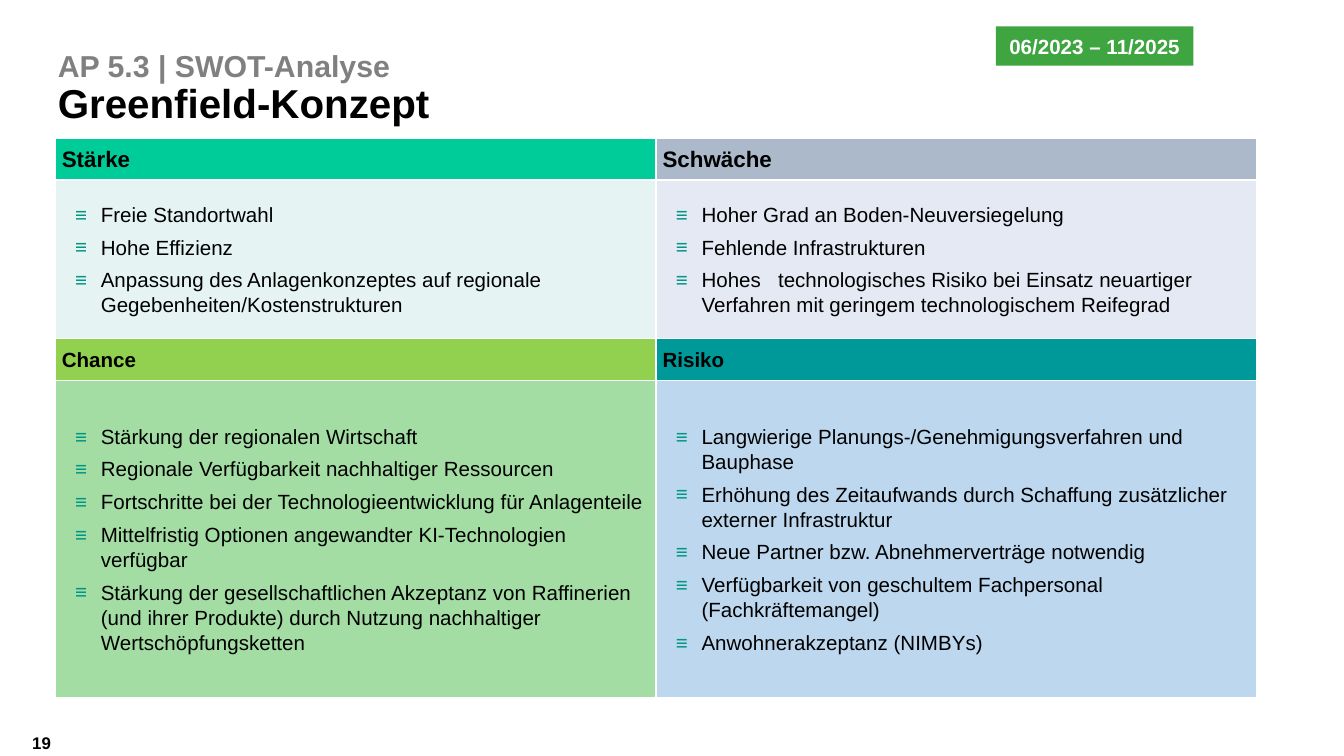
import pptx
import pptx.dml.color
import pptx.enum.shapes
import pptx.enum.text
import pptx.oxml
import pptx.oxml.ns
import pptx.util

WIDTH = 10
HEIGHT = WIDTH * 9 / 16
FONT = "Arial"
MIDDLE = pptx.enum.text.MSO_ANCHOR.MIDDLE
COLORS = {
    "text": "000000", "grey": "808080", "white": "FFFFFF",
    "badge": "3EA540", "bullet": "009682",
    "strength": "00CC99", "strength_body": "E5F4F2",
    "weakness": "ACB9CA", "weakness_body": "E5E9F3",
    "chance": "92D050", "chance_body": "A3DDA4",
    "risk": "009999", "risk_body": "BDD7EE",
}
ROW_SHARES = (0.31 / 4.16, 1.18 / 4.16, 0.31 / 4.16, 2.36 / 4.16)
QUADRANTS = [
    (0, 0, "strength", "Stärke", 12, [
        "Freie Standortwahl",
        "Hohe Effizienz",
        "Anpassung des Anlagenkonzeptes auf regionale Gegebenheiten/Kostenstrukturen",
    ]),
    (0, 1, "weakness", "Schwäche", 12, [
        "Hoher Grad an Boden-Neuversiegelung",
        "Fehlende Infrastrukturen",
        "Hohes   technologisches Risiko bei Einsatz neuartiger Verfahren mit geringem technologischem Reifegrad",
    ]),
    (2, 0, "chance", "Chance", 11, [
        "Stärkung der regionalen Wirtschaft",
        "Regionale Verfügbarkeit nachhaltiger Ressourcen",
        "Fortschritte bei der Technologieentwicklung für Anlagenteile",
        "Mittelfristig Optionen angewandter KI-Technologien verfügbar",
        "Stärkung der gesellschaftlichen Akzeptanz von Raffinerien (und ihrer Produkte) durch Nutzung nachhaltiger Wertschöpfungsketten",
    ]),
    (2, 1, "risk", "Risiko", 11, [
        "Langwierige Planungs-/Genehmigungsverfahren und Bauphase",
        "Erhöhung des Zeitaufwands durch Schaffung zusätzlicher externer Infrastruktur",
        "Neue Partner bzw. Abnehmerverträge notwendig",
        "Verfügbarkeit von geschultem Fachpersonal (Fachkräftemangel)",
        "Anwohnerakzeptanz (NIMBYs)",
    ]),
]


def color(name):
    return pptx.dml.color.RGBColor.from_string(COLORS[name])


def share_box(left, top, width, height):
    shares = (left * WIDTH, top * HEIGHT, width * WIDTH, height * HEIGHT)
    return tuple(pptx.util.Inches(length) for length in shares)


def add_run(paragraph, text, size, color_name="text", bold=True):
    run = paragraph.add_run()
    run.text = text
    run.font.name = FONT
    run.font.size = pptx.util.Pt(size)
    run.font.bold = bold
    run.font.color.rgb = color(color_name)


def clear_margins(text_frame):
    text_frame.margin_left = text_frame.margin_right = 0
    text_frame.margin_top = text_frame.margin_bottom = 0


def add_bullet(paragraph):
    properties = paragraph._p.get_or_add_pPr()
    properties.set("marL", str(pptx.util.Inches(0.29)))
    properties.set("indent", str(pptx.util.Inches(-0.19)))
    namespace = pptx.oxml.ns.nsdecls("a")
    for element in (
        f'<a:buClr {namespace}><a:srgbClr val="{COLORS["bullet"]}"/></a:buClr>',
        f'<a:buFont {namespace} typeface="{FONT}"/>',
        f'<a:buChar {namespace} char="≡"/>',
    ):
        properties.append(pptx.oxml.parse_xml(element))


def format_cell(cell, fill_name):
    cell.margin_left = cell.margin_right = pptx.util.Inches(0.05)
    cell.margin_top = cell.margin_bottom = 0
    cell.vertical_anchor = MIDDLE
    properties = cell._tc.get_or_add_tcPr()
    for side in ("lnL", "lnR", "lnT", "lnB"):
        properties.append(pptx.oxml.parse_xml(
            f'<a:{side} {pptx.oxml.ns.nsdecls("a")} w="{pptx.util.Pt(1)}"><a:solidFill>'
            f'<a:srgbClr val="{COLORS["white"]}"/></a:solidFill></a:{side}>'))
    cell.fill.solid()
    cell.fill.fore_color.rgb = color(fill_name)


def fill_quadrant(table, row, column, name, heading, heading_size, points):
    heading_cell = table.cell(row, column)
    format_cell(heading_cell, name)
    paragraph = heading_cell.text_frame.paragraphs[0]
    paragraph.line_spacing = 1.07
    add_run(paragraph, heading, heading_size)

    body_cell = table.cell(row + 1, column)
    format_cell(body_cell, f"{name}_body")
    text_frame = body_cell.text_frame
    for index, point in enumerate(points):
        paragraph = text_frame.add_paragraph() if index else text_frame.paragraphs[0]
        add_bullet(paragraph)
        paragraph.line_spacing = 1.1
        paragraph.space_before = pptx.util.Pt(2 if index else 0)
        paragraph.space_after = pptx.util.Pt(2)
        add_run(paragraph, point, 11, bold=False)


def add_swot_table(slide, box):
    left, top, width, height = box
    table = slide.shapes.add_table(4, 2, left, top, width, height).table
    table.first_row = table.horz_banding = False
    for column in table.columns:
        column.width = width // 2
    for row, row_share in zip(table.rows, ROW_SHARES):
        row.height = int(height * row_share)
    for quadrant in QUADRANTS:
        fill_quadrant(table, *quadrant)


def place_title(slide, box):
    title = slide.shapes.title
    title.left, title.top, title.width, title.height = box
    text_frame = title.text_frame
    clear_margins(text_frame)
    text_frame.word_wrap = True
    text_frame.auto_size = pptx.enum.text.MSO_AUTO_SIZE.NONE
    text_frame.vertical_anchor = pptx.enum.text.MSO_ANCHOR.BOTTOM
    paragraph = text_frame.paragraphs[0]
    paragraph.alignment = pptx.enum.text.PP_ALIGN.LEFT
    paragraph.line_spacing = 0.9
    add_run(paragraph, "AP 5.3 | SWOT-Analyse", 16.2, "grey")
    paragraph.add_line_break()
    add_run(paragraph, "Greenfield-Konzept", 21.6)


def add_date_badge(slide, box):
    badge = slide.shapes.add_shape(pptx.enum.shapes.MSO_SHAPE.RECTANGLE, *box)
    badge.shadow.inherit = False
    badge.fill.solid()
    badge.fill.fore_color.rgb = color("badge")
    badge.line.fill.background()
    badge.text_frame.word_wrap = False
    badge.text_frame.vertical_anchor = MIDDLE
    paragraph = badge.text_frame.paragraphs[0]
    paragraph.alignment = pptx.enum.text.PP_ALIGN.CENTER
    add_run(paragraph, "06/2023 – 11/2025", 11, "white")


def add_page_number(slide, box):
    text_frame = slide.shapes.add_textbox(*box).text_frame
    clear_margins(text_frame)
    text_frame.word_wrap = True
    text_frame.vertical_anchor = MIDDLE
    add_run(text_frame.paragraphs[0], "19", 9)


def main():
    presentation = pptx.Presentation()
    presentation.slide_width = pptx.util.Inches(WIDTH)
    presentation.slide_height = pptx.util.Inches(HEIGHT)
    slide = presentation.slides.add_slide(presentation.slide_layouts.get_by_name("Title Only"))
    add_swot_table(slide, share_box(0.041, 0.183, 0.894, 0.74))
    add_page_number(slide, share_box(0.024, 0.944, 0.036, 0.076))
    place_title(slide, share_box(0.043, 0.057, 0.751, 0.112))
    add_date_badge(slide, share_box(0.741, 0.035, 0.147, 0.052))
    presentation.save("out.pptx")


if __name__ == "__main__":
    main()
